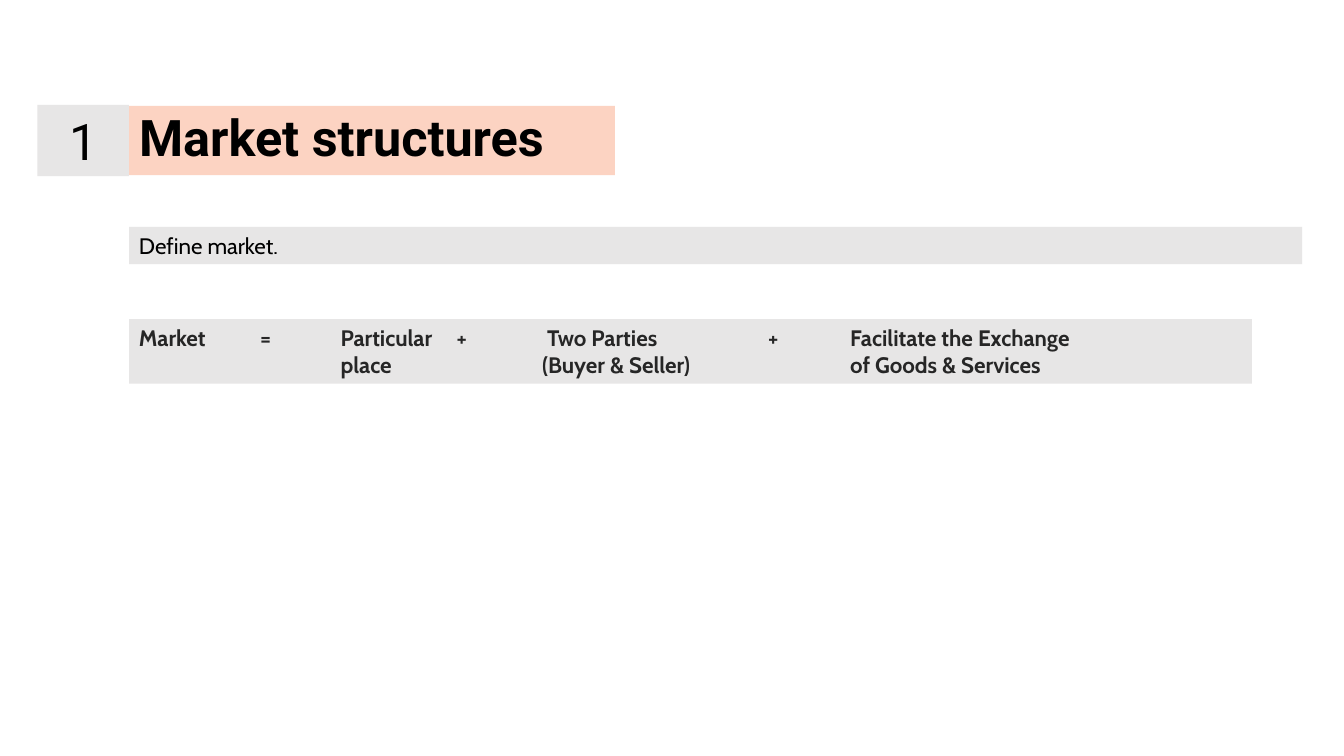
from lxml.etree import SubElement
from pptx import Presentation
from pptx.dml.color import RGBColor
from pptx.enum.shapes import MSO_SHAPE
from pptx.enum.text import MSO_ANCHOR, MSO_AUTO_SIZE, PP_ALIGN
from pptx.oxml.ns import qn
from pptx.util import Pt

GREY = "E7E6E6"
PEACH = "FCD3C2"
BLACK = "000000"
CHARCOAL = "262626"
LEFT = 92.16


def color(value):
    return RGBColor.from_string(value)


class Deck:
    heading_font = "Roboto"
    body_font = "Cabin"

    def __init__(self, width, height):
        self.prs = Presentation()
        self.prs.slide_width = Pt(width)
        self.prs.slide_height = Pt(height)
        self.s = self.prs.slides.add_slide(self.prs.slide_layouts[5])

    def label(self, sp, text, font, size, ink=BLACK, bold=False,
              align=PP_ALIGN.LEFT, anchor=MSO_ANCHOR.TOP):
        tf = sp.text_frame
        tf.word_wrap = True
        tf.auto_size = MSO_AUTO_SIZE.NONE
        tf.vertical_anchor = anchor
        tf.margin_left = tf.margin_right = Pt(7.2)
        tf.margin_top = tf.margin_bottom = Pt(3.6)
        p = tf.paragraphs[0]
        p.text = text
        p.alignment = align
        for r in p.runs:
            r.font.name = font
            r.font.size = Pt(size)
            r.font.bold = bold
            r.font.color.rgb = color(ink)
        return p

    def title(self, text, x, y, w, h, fill):
        sp = self.s.shapes.title
        sp.left, sp.top, sp.width, sp.height = Pt(x), Pt(y), Pt(w), Pt(h)
        sp.fill.solid()
        sp.fill.fore_color.rgb = color(fill)
        p = self.label(sp, text, self.heading_font, 36, bold=True,
                       anchor=MSO_ANCHOR.MIDDLE)
        p.line_spacing = 0.9

    def bar(self, text, x, y, w, h, font, size, **style):
        sp = self.s.shapes.add_shape(
            MSO_SHAPE.RECTANGLE, Pt(x), Pt(y), Pt(w), Pt(h))
        sp.shadow.inherit = False
        sp.fill.solid()
        sp.fill.fore_color.rgb = color(GREY)
        sp.line.fill.background()
        return self.label(sp, text, font, size, **style)

    def tabs(self, p, stops):
        tab_list = SubElement(p._p.get_or_add_pPr(), qn("a:tabLst"))
        for stop in stops:
            SubElement(tab_list, qn("a:tab"), pos=str(Pt(stop)), algn="l")


def main():
    deck = Deck(960, 540)
    deck.title("Market structures", LEFT, 75.6, 347, 49.5, PEACH)
    deck.bar("1", 26.64, 74.88, LEFT - 26.64, 51, deck.heading_font, 36,
             align=PP_ALIGN.CENTER)
    deck.bar("Define market.", LEFT, 162, 838, 26.64, deck.body_font, 16)
    equation = deck.bar(
        "Market\t=\tParticular\t+\t Two Parties\t+\tFacilitate the Exchange\v"
        "\t\tplace\t\t(Buyer & Seller)\t\tof Goods & Services",
        LEFT, 228, 802, 46, deck.body_font, 16, ink=CHARCOAL, bold=True)
    deck.tabs(equation, [86.5, 144, 227, 288, 449.5, 508])
    deck.prs.save("out.pptx")


if __name__ == "__main__":
    main()
